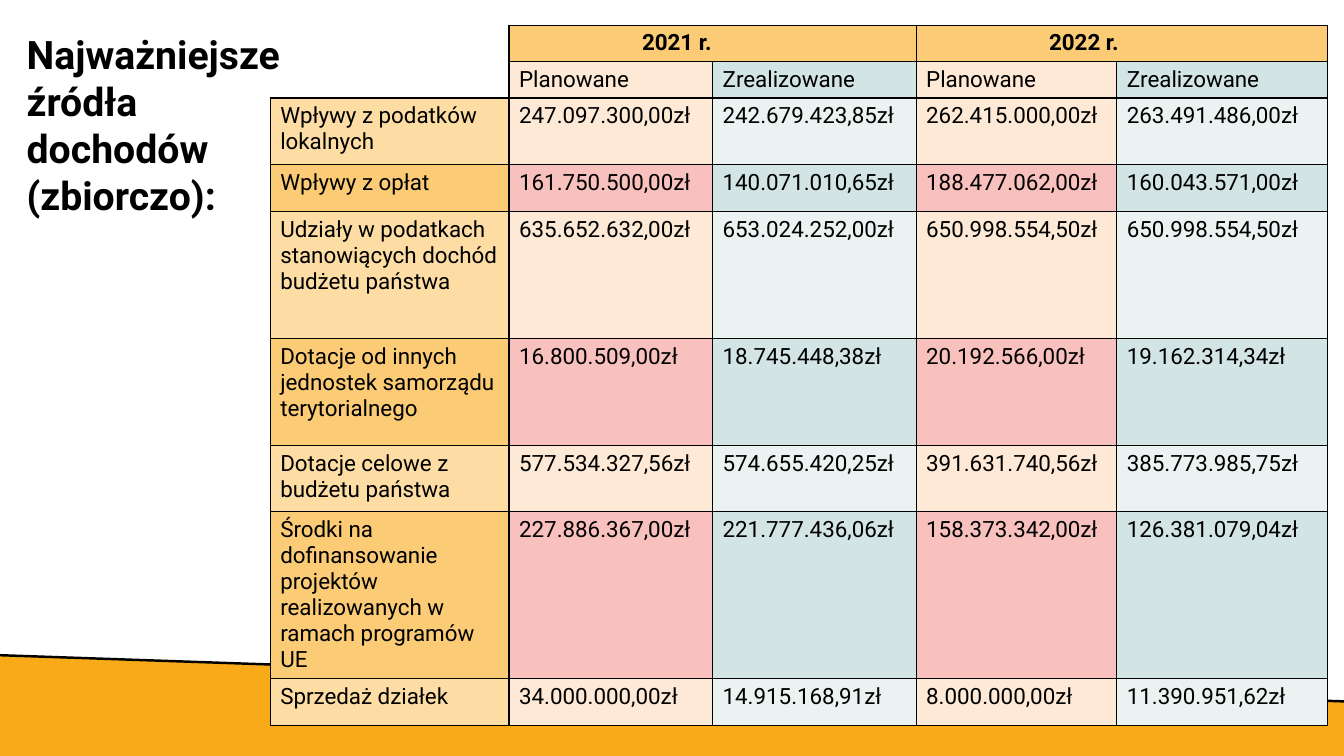
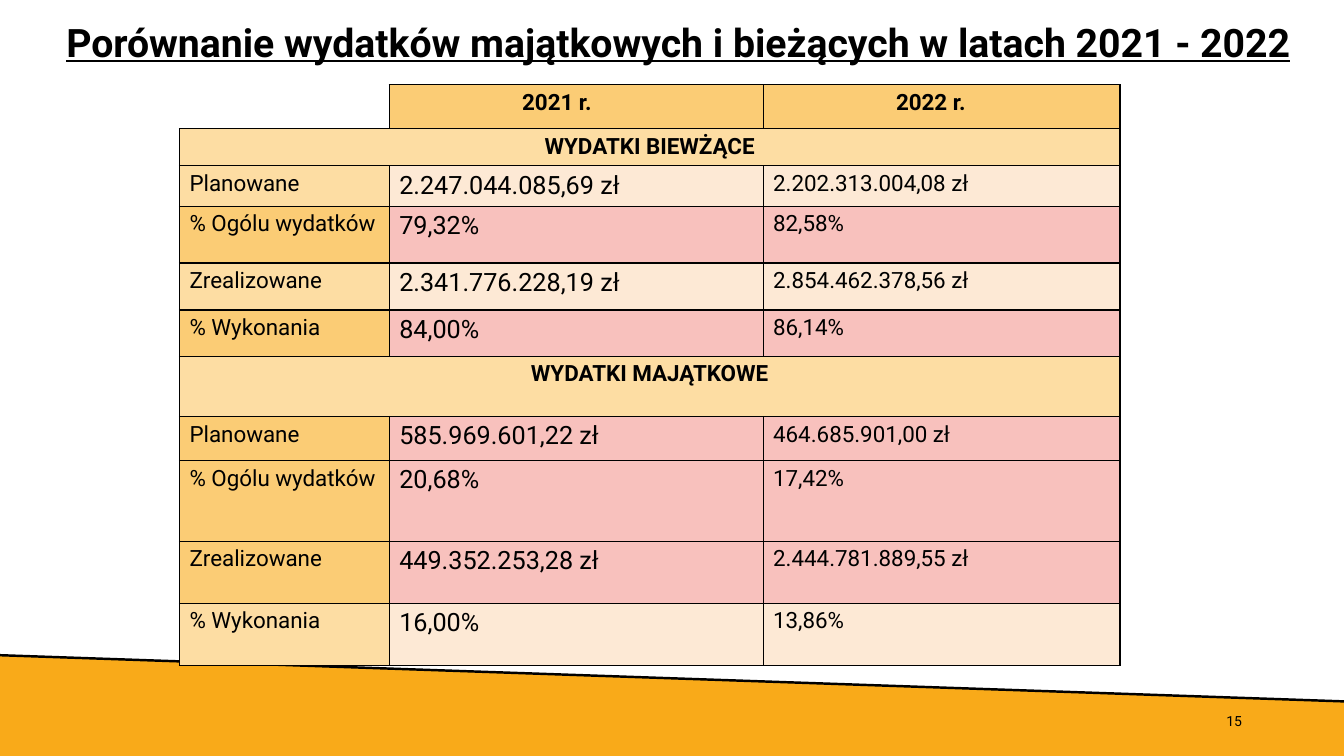
from dataclasses import dataclass

from lxml import etree
from pptx import Presentation
from pptx.dml.color import RGBColor
from pptx.enum.shapes import MSO_CONNECTOR
from pptx.enum.text import MSO_ANCHOR, PP_ALIGN
from pptx.oxml.ns import qn
from pptx.util import Pt

BLACK = RGBColor(0x00, 0x00, 0x00)
WHITE = RGBColor(0xFF, 0xFF, 0xFF)
ORANGE = RGBColor(0xF9, 0xAA, 0x19)
AMBER = RGBColor(0xFB, 0xCC, 0x75)
LIGHT_AMBER = RGBColor(0xFD, 0xDD, 0xA3)
PEACH = RGBColor(0xFD, 0xE9, 0xD5)
PINK = RGBColor(0xF8, 0xC1, 0xBD)
TEAL = RGBColor(0xD3, 0xE4, 0xE4)
LIGHT_TEAL = RGBColor(0xEA, 0xF2, 0xF2)

LEFT, CENTER, RIGHT = PP_ALIGN.LEFT, PP_ALIGN.CENTER, PP_ALIGN.RIGHT
MIDDLE = MSO_ANCHOR.MIDDLE
STRAIGHT = MSO_CONNECTOR.STRAIGHT

SLIDE_WIDTH, SLIDE_HEIGHT = 960, 540
BAND_LEFT_Y, BAND_RIGHT_Y = 468, 501
YEAR_INDENT = 95


@dataclass
class Cell:
    text: str = ""
    fill: RGBColor = WHITE
    size: int = 16
    bold: bool = False
    align: PP_ALIGN = LEFT
    indent: float = 7.2
    span: int = 1


class Deck:
    font = "Roboto"

    def __init__(self):
        self.prs = Presentation()
        self.prs.slide_width = Pt(SLIDE_WIDTH)
        self.prs.slide_height = Pt(SLIDE_HEIGHT)
        self.slide = None

    def new_slide(self):
        self.slide = self.prs.slides.add_slide(self.prs.slide_layouts[6])
        self.band()

    def band(self):
        builder = self.slide.shapes.build_freeform(0, Pt(BAND_LEFT_Y))
        corners = [(SLIDE_WIDTH, BAND_RIGHT_Y), (SLIDE_WIDTH, SLIDE_HEIGHT), (0, SLIDE_HEIGHT)]
        builder.add_line_segments([(Pt(x), Pt(y)) for x, y in corners])
        band = builder.convert_to_shape()
        band.shadow.inherit = False
        band.fill.solid()
        band.fill.fore_color.rgb = ORANGE
        band.line.fill.background()
        edge = self.slide.shapes.add_connector(
            STRAIGHT, 0, Pt(BAND_LEFT_Y), Pt(SLIDE_WIDTH), Pt(BAND_RIGHT_Y))
        edge.line.color.rgb = BLACK
        edge.line.width = Pt(1.75)
        etree.SubElement(edge._element.spPr, qn("a:effectLst"))

    def style(self, paragraph, size, bold=False, underline=False, align=LEFT):
        paragraph.alignment = align
        for run in paragraph.runs:
            run.font.name = self.font
            run.font.size = Pt(size)
            run.font.bold = bold
            run.font.underline = underline
            run.font.color.rgb = BLACK

    def text(self, left, top, width, height, wording, size, anchor=None, **style):
        box = self.slide.shapes.add_textbox(Pt(left), Pt(top), Pt(width), Pt(height))
        frame = box.text_frame
        frame.word_wrap = True
        frame.vertical_anchor = anchor
        frame.text = wording
        self.style(frame.paragraphs[0], size, **style)

    def title(self, left, top, width, height, wording, underline=False):
        self.text(left, top, width, height, wording, 28, bold=True, underline=underline)

    def page_number(self, number):
        self.text(678.2, 500.4, 216, 28.8, str(number), 10, anchor=MIDDLE, align=RIGHT)

    def border(self, target, side, color):
        line = etree.SubElement(target._tc.get_or_add_tcPr(), qn("a:ln" + side))
        line.set("w", str(Pt(1)))
        solid = etree.SubElement(line, qn("a:solidFill"))
        etree.SubElement(solid, qn("a:srgbClr")).set("val", str(color))

    def cell(self, target, content, white_sides=""):
        for side in "LRTB":
            self.border(target, side, WHITE if side in white_sides else BLACK)
        target.fill.solid()
        target.fill.fore_color.rgb = content.fill
        target.margin_left = Pt(content.indent)
        if target.is_spanned or not content.text:
            target.margin_top = target.margin_bottom = 0
            return
        target.text_frame.text = content.text
        self.style(target.text_frame.paragraphs[0], content.size, content.bold,
                   align=content.align)

    def table(self, left, top, widths, heights, rows):
        frame = self.slide.shapes.add_table(
            len(heights), len(widths), Pt(left), Pt(top), Pt(sum(widths)), Pt(sum(heights)))
        table = frame.table
        table.first_row = table.horz_banding = False
        for column, width in zip(table.columns, widths):
            column.width = Pt(width)
        for r, (height, contents) in enumerate(zip(heights, rows)):
            table.rows[r].height = Pt(height)
            c = 0
            for content in contents:
                last = c + content.span - 1
                if last > c:
                    table.cell(r, c).merge(table.cell(r, last))
                white_sides = ""
                if not content.text:
                    white_sides = "LT" if rows[r + 1][0].text else "LTB"
                for column in range(c, last + 1):
                    self.cell(table.cell(r, column), content, white_sides)
                c = last + 1


def year_cells(span=1):
    return [Cell(year, AMBER, bold=True, indent=YEAR_INDENT, span=span)
            for year in ("2021 r.", "2022 r.")]


def income_slide(deck):
    sources = [
        ("Wpływy z podatków lokalnych", "247.097.300,00zł", "242.679.423,85zł",
         "262.415.000,00zł", "263.491.486,00zł"),
        ("Wpływy z opłat", "161.750.500,00zł", "140.071.010,65zł",
         "188.477.062,00zł", "160.043.571,00zł"),
        ("Udziały w podatkach stanowiących dochód budżetu państwa", "635.652.632,00zł",
         "653.024.252,00zł", "650.998.554,50zł", "650.998.554,50zł"),
        ("Dotacje od innych jednostek samorządu terytorialnego", "16.800.509,00zł",
         "18.745.448,38zł", "20.192.566,00zł", "19.162.314,34zł"),
        ("Dotacje celowe z budżetu państwa", "577.534.327,56zł", "574.655.420,25zł",
         "391.631.740,56zł", "385.773.985,75zł"),
        ("Środki na dofinansowanie projektów realizowanych w ramach programów UE",
         "227.886.367,00zł", "221.777.436,06zł", "158.373.342,00zł", "126.381.079,04zł"),
        ("Sprzedaż działek", "34.000.000,00zł", "14.915.168,91zł",
         "8.000.000,00zł", "11.390.951,62zł"),
    ]
    row_fills = [(LIGHT_AMBER, PEACH, LIGHT_TEAL, PEACH, LIGHT_TEAL),
                 (AMBER, PINK, TEAL, PINK, TEAL)]
    rows = [
        [Cell()] + year_cells(span=2),
        [Cell()] + [Cell("Planowane", PEACH), Cell("Zrealizowane", TEAL)] * 2,
    ]
    for index, source in enumerate(sources):
        rows.append([Cell(text, fill) for text, fill in zip(source, row_fills[index % 2])])

    deck.new_slide()
    deck.table(193, 18, [170.6, 145.4, 145.4, 143.3, 150.5],
               [26, 26, 47.8, 33.4, 90.7, 76.4, 47.3, 119.2, 33.4], rows)
    deck.title(12, 18, 205, 143, "Najważniejsze źródła dochodów (zbiorczo):")


def spending_slide(deck):
    light, dark = (LIGHT_AMBER, PEACH), (AMBER, PINK)
    sections = [
        ("WYDATKI BIEWŻĄCE", [
            ("Planowane", "2.247.044.085,69 zł", "2.202.313.004,08 zł", light),
            ("% Ogólu wydatków", "79,32%", "82,58%", dark),
            ("Zrealizowane", "2.341.776.228,19 zł", "2.854.462.378,56 zł", light),
            ("% Wykonania", "84,00%", "86,14%", dark),
        ]),
        ("WYDATKI MAJĄTKOWE", [
            ("Planowane", "585.969.601,22 zł", "464.685.901,00 zł", dark),
            ("% Ogólu wydatków", "20,68%", "17,42%", dark),
            ("Zrealizowane", "449.352.253,28 zł", "2.444.781.889,55 zł", dark),
            ("% Wykonania", "16,00%", "13,86%", light),
        ]),
    ]
    rows = [[Cell()] + year_cells()]
    for heading, measures in sections:
        rows.append([Cell(heading, LIGHT_AMBER, bold=True, align=CENTER, span=3)])
        for label, year_2021, year_2022, (label_fill, value_fill) in measures:
            rows.append([Cell(label, label_fill), Cell(year_2021, value_fill, size=18),
                         Cell(year_2022, value_fill)])

    deck.new_slide()
    deck.page_number(15)
    deck.table(128.2, 60.5, [149.8, 267.1, 254.9],
               [31.6, 26, 27.8, 40.5, 33.7, 33, 43, 31.5, 57.7, 44.3, 44.3], rows)
    deck.title(40.3, 9.4, 919.4, 41, "Porównanie wydatków majątkowych i bieżących w latach 2021 - 2022",
               underline=True)


def main():
    deck = Deck()
    income_slide(deck)
    spending_slide(deck)
    deck.prs.save("out.pptx")


if __name__ == "__main__":
    main()
